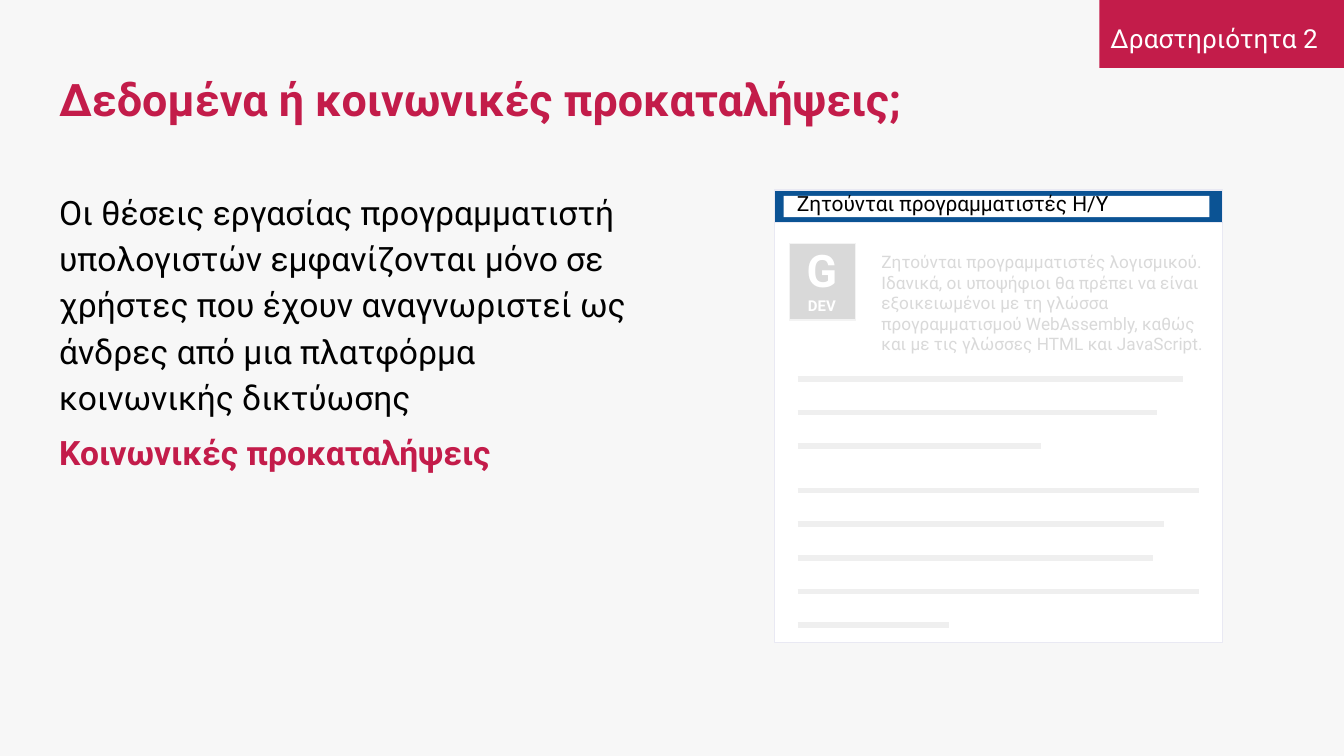
from dataclasses import dataclass

from lxml.etree import SubElement
from pptx import Presentation
from pptx.dml.color import RGBColor
from pptx.enum.shapes import MSO_CONNECTOR, MSO_SHAPE
from pptx.enum.text import MSO_ANCHOR, MSO_AUTO_SIZE, PP_ALIGN
from pptx.oxml.ns import qn
from pptx.util import Pt


@dataclass(frozen=True)
class Theme:
    font: str = "Roboto"
    background: str = "F7F7F7"
    accent: str = "C31C4A"
    text: str = "000000"
    white: str = "FFFFFF"
    banner: str = "0B5394"
    border: str = "E9E9F3"
    badge: str = "D9D9D9"
    badge_border: str = "F3F3F3"
    rule: str = "EFEFEF"
    title_size: float = 24
    body_size: float = 18
    label_size: float = 14
    heading_size: float = 11.2
    advert_size: float = 9.2
    badge_size: float = 8


class SlideBuilder:
    def __init__(self, slide, theme):
        self.slide = slide
        self.theme = theme
        self.shapes = slide.shapes
        slide.background.fill.solid()
        slide.background.fill.fore_color.rgb = RGBColor.from_string(theme.background)

    def start_group(self):
        self.shapes = self.slide.shapes.add_group_shape().shapes

    def fill_text(self, shape, lines, size, color, bold=False, align=PP_ALIGN.LEFT,
                  anchor=MSO_ANCHOR.TOP, spacing=1.0, after=0, inset=(7.2, 7.2)):
        frame = shape.text_frame
        frame.word_wrap = True
        frame.auto_size = MSO_AUTO_SIZE.NONE
        frame.vertical_anchor = anchor
        frame.margin_left = frame.margin_right = Pt(inset[0])
        frame.margin_top = frame.margin_bottom = Pt(inset[1])
        frame.text = "\n".join(lines)
        for paragraph in frame.paragraphs:
            paragraph.alignment = align
            paragraph.line_spacing = spacing
            paragraph.space_before = Pt(0)
            paragraph.space_after = Pt(after)
            font = paragraph.font
            font.name = self.theme.font
            font.size = Pt(size)
            font.bold = bold
            font.color.rgb = RGBColor.from_string(color)
        return frame

    def placeholder(self, index, box, text, size, color, **style):
        shape = self.slide.placeholders[index]
        shape.left, shape.top, shape.width, shape.height = map(Pt, box)
        frame = self.fill_text(shape, [text], size, color, **style)
        properties = frame.paragraphs[0]._p.get_or_add_pPr()
        properties.set("marL", "0")
        properties.set("indent", "0")
        bullet = properties.makeelement(qn("a:buNone"), {})
        properties.find(qn("a:defRPr")).addprevious(bullet)

    def text(self, box, lines, size, color, **style):
        shape = self.shapes.add_textbox(*map(Pt, box))
        return self.fill_text(shape, lines, size, color, **style)

    def rectangle(self, box, fill, border=None):
        shape = self.shapes.add_shape(MSO_SHAPE.RECTANGLE, *map(Pt, box))
        shape.shadow.inherit = False
        shape.fill.solid()
        shape.fill.fore_color.rgb = RGBColor.from_string(fill)
        if border:
            shape.line.color.rgb = RGBColor.from_string(border)
            shape.line.width = Pt(0.75)
        else:
            shape.line.fill.background()
        return shape

    def rule(self, left, right, top):
        line = self.shapes.add_connector(
            MSO_CONNECTOR.STRAIGHT, Pt(left), Pt(top), Pt(right), Pt(top))
        line.line.color.rgb = RGBColor.from_string(self.theme.rule)
        line.line.width = Pt(3)
        SubElement(line._element.spPr, qn("a:effectLst"))


def main():
    presentation = Presentation()
    presentation.slide_width, presentation.slide_height = Pt(720), Pt(405)
    slide = presentation.slides.add_slide(presentation.slide_layouts[3])
    theme = Theme()
    builder = SlideBuilder(slide, theme)

    builder.placeholder(0, (24.5, 25.2, 671, 54.7), "Δεδομένα ή κοινωνικές προκαταλήψεις;",
                        theme.title_size, theme.accent, bold=True, anchor=MSO_ANCHOR.MIDDLE)
    body_style = {"spacing": 1.15, "after": 16}
    builder.placeholder(
        1, (24.5, 92.2, 322.6, 288),
        "Οι θέσεις εργασίας προγραμματιστή υπολογιστών εμφανίζονται μόνο σε χρήστες "
        "που έχουν αναγνωριστεί ως άνδρες από μια πλατφόρμα κοινωνικής δικτύωσης",
        theme.body_size, theme.text, **body_style)
    builder.placeholder(2, (24.5, 221, 322.6, 66.2), "Κοινωνικές προκαταλήψεις",
                        theme.body_size, theme.accent, bold=True, **body_style)

    builder.rectangle((589, 0, 131, 36.4), theme.accent)
    builder.text((587.5, 2.2, 126, 30.2), ["Δραστηριότητα 2"], theme.label_size,
                 theme.white, align=PP_ALIGN.CENTER, **body_style)

    builder.start_group()
    builder.rectangle((415, 101.8, 240, 242.6), theme.white, theme.border)
    builder.text(
        (465.1, 127.4, 190, 74.9),
        ["Ζητούνται προγραμματιστές λογισμικού.",
         "Ιδανικά, οι υποψήφιοι θα πρέπει να είναι εξοικειωμένοι με τη γλώσσα "
         "προγραμματισμού WebAssembly, καθώς και με τις γλώσσες HTML και JavaScript."],
        theme.advert_size, theme.badge)
    builder.rectangle((415, 101.8, 240, 17.6), theme.banner, theme.border)
    builder.rectangle((422.9, 130.5, 35.3, 41), theme.badge, theme.badge_border)

    rule_blocks = [(203, (633.6, 620, 557.8)),
                   (262.8, (642.4, 623.5, 617.8, 642.4, 508.3))]
    for top, right_ends in rule_blocks:
        for row, right in enumerate(right_ends):
            builder.rule(427.5, right, top + 18 * row)

    badge = builder.text((424.8, 131, 31, 36.7), ["G\vDEV"], theme.title_size, theme.white,
                         bold=True, align=PP_ALIGN.CENTER, anchor=MSO_ANCHOR.MIDDLE,
                         inset=(1.4, 1.4))
    badge.paragraphs[0].runs[1].font.size = Pt(theme.badge_size)
    heading = builder.rectangle((419.8, 105, 228.2, 11.4), theme.white)
    builder.fill_text(heading, ["Ζητούνται προγραμματιστές Η/Υ"], theme.heading_size,
                      theme.text, spacing=0.8, inset=(7.2, 0))

    presentation.save("out.pptx")


if __name__ == "__main__":
    main()
